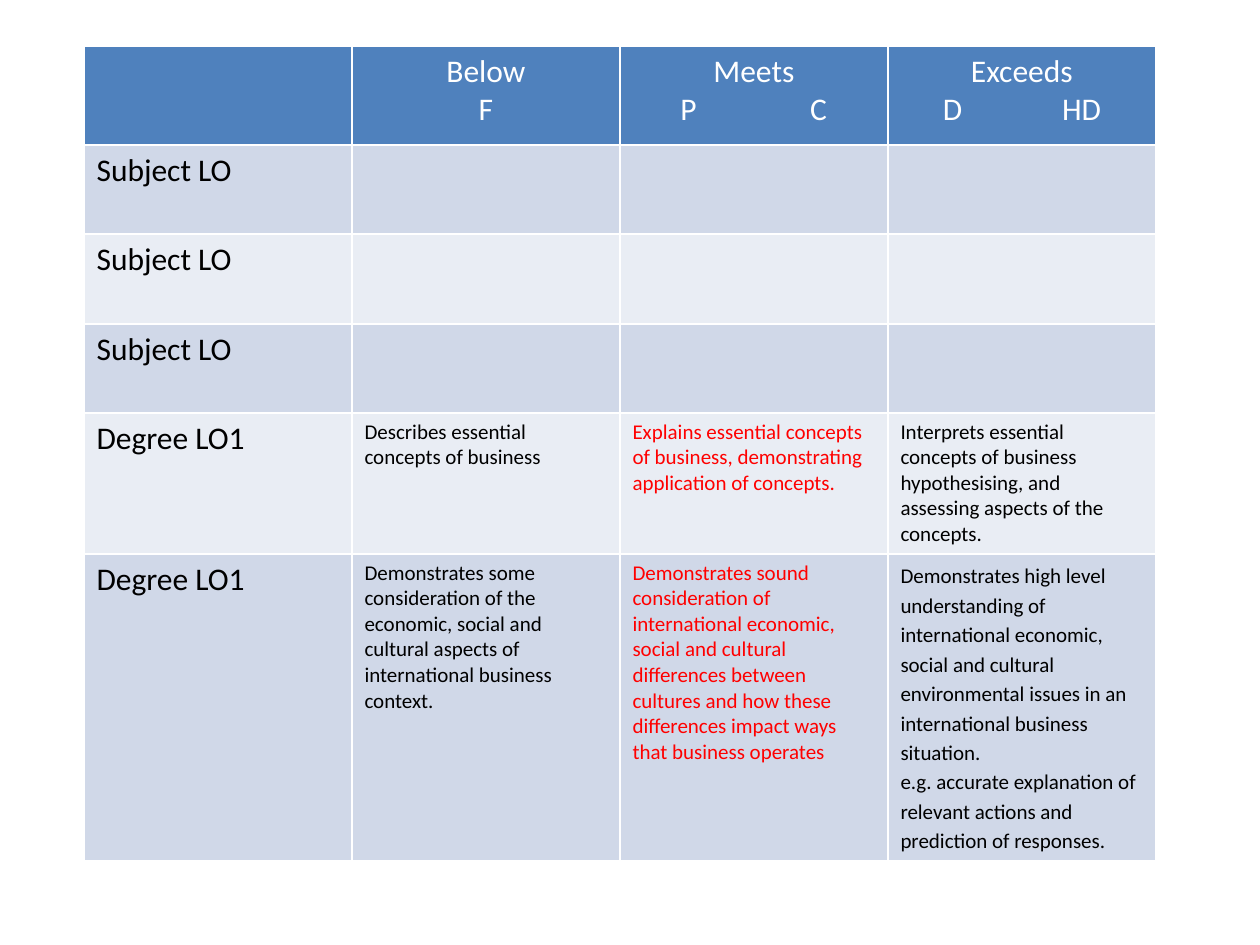
from dataclasses import dataclass
from typing import Optional

from lxml import etree
from pptx import Presentation
from pptx import util as u
from pptx.dml.color import RGBColor
from pptx.enum import text
from pptx.oxml.ns import qn

PIXEL = 914400 / 126
FONT = "Calibri"
COLORS = {
    "header": "4F81BD",
    "odd": "D0D8E8",
    "even": "E9EDF4",
    "white": "FFFFFF",
    "black": "000000",
    "red": "FF0000",
}
LEFT, TOP = 84, 46
COLUMN_WIDTH = 268
ROW_HEIGHTS = (99, 89, 90, 89, 141, 306)


@dataclass(frozen=True)
class Entry:
    lines: tuple[str, ...] = ()
    size: int = 12
    color: str = "black"
    alignment: Optional[text.PP_ALIGN] = None
    spacing: Optional[float] = None
    tabs: tuple[int, ...] = ()


def px(length: int) -> u.Emu:
    return u.Emu(round(length * PIXEL))


def rgb(name: str) -> RGBColor:
    return RGBColor.from_string(COLORS[name])


def heading(*lines: str, tabs: tuple[int, ...] = ()) -> Entry:
    return Entry(lines, 18, "white", text.PP_ALIGN.CENTER, tabs=tabs)


def outcome(label: str) -> Entry:
    return Entry((label,), 18)


SUBJECT_ROW = (outcome("Subject LO"), Entry(), Entry(), Entry())
ROWS = (
    (
        Entry(),
        heading("Below", "F"),
        heading("Meets", "\tP\tC", tabs=(56, 186)),
        heading("Exceeds", "\tD\tHD", tabs=(52, 181)),
    ),
    SUBJECT_ROW,
    SUBJECT_ROW,
    SUBJECT_ROW,
    (
        outcome("Degree LO1"),
        Entry(("Describes essential concepts of business",)),
        Entry(
            ("Explains essential concepts of business, demonstrating application of concepts.",),
            color="red",
        ),
        Entry((
            "Interprets essential concepts of business hypothesising, "
            "and assessing aspects of the concepts.",
        )),
    ),
    (
        outcome("Degree LO1"),
        Entry((
            "Demonstrates some consideration of the economic, social and cultural "
            "aspects of international business context.",
        )),
        Entry(
            (
                "Demonstrates sound consideration of international economic, social and "
                "cultural differences between cultures and how these differences impact "
                "ways that business operates",
            ),
            color="red",
        ),
        Entry(
            (
                "Demonstrates high level understanding of international economic, social "
                "and cultural environmental issues in an international business situation.",
                "e.g. accurate explanation of relevant actions and prediction of responses.",
            ),
            spacing=1.15,
        ),
    ),
)


def add_tabs(paragraph, positions: tuple[int, ...]) -> None:
    properties = paragraph._p.get_or_add_pPr()
    tab_list = etree.Element(qn("a:tabLst"))
    for position in positions:
        etree.SubElement(tab_list, qn("a:tab"), pos=str(px(position)), algn="ctr")
    properties.find(qn("a:defRPr")).addprevious(tab_list)


def fill_cell(cell, entry: Entry, fill: str) -> None:
    cell.fill.solid()
    cell.fill.fore_color.rgb = rgb(fill)
    frame = cell.text_frame
    for index, line in enumerate(entry.lines):
        paragraph = frame.add_paragraph() if index else frame.paragraphs[0]
        paragraph.add_run().text = line
        paragraph.alignment = entry.alignment
        paragraph.line_spacing = entry.spacing
        paragraph.font.name = FONT
        paragraph.font.size = u.Pt(entry.size)
        paragraph.font.bold = False
        paragraph.font.color.rgb = rgb(entry.color)
        if "\t" in line:
            paragraph.alignment = text.PP_ALIGN.LEFT
            add_tabs(paragraph, entry.tabs)


def add_rubric(slide) -> None:
    columns = len(ROWS[0])
    shape = slide.shapes.add_table(
        len(ROWS), columns, px(LEFT), px(TOP),
        px(COLUMN_WIDTH * columns), px(sum(ROW_HEIGHTS)),
    )
    table = shape.table
    for column in table.columns:
        column.width = px(COLUMN_WIDTH)
    for index, (entries, height) in enumerate(zip(ROWS, ROW_HEIGHTS)):
        table.rows[index].height = px(height)
        fill = "header" if index == 0 else "odd" if index % 2 else "even"
        for position, entry in enumerate(entries):
            fill_cell(table.cell(index, position), entry, fill)


def main() -> None:
    presentation = Presentation()
    presentation.slide_width = u.Inches(10)
    presentation.slide_height = u.Inches(7.5)
    slide = presentation.slides.add_slide(presentation.slide_layouts[6])
    add_rubric(slide)
    presentation.save("out.pptx")


if __name__ == "__main__":
    main()
